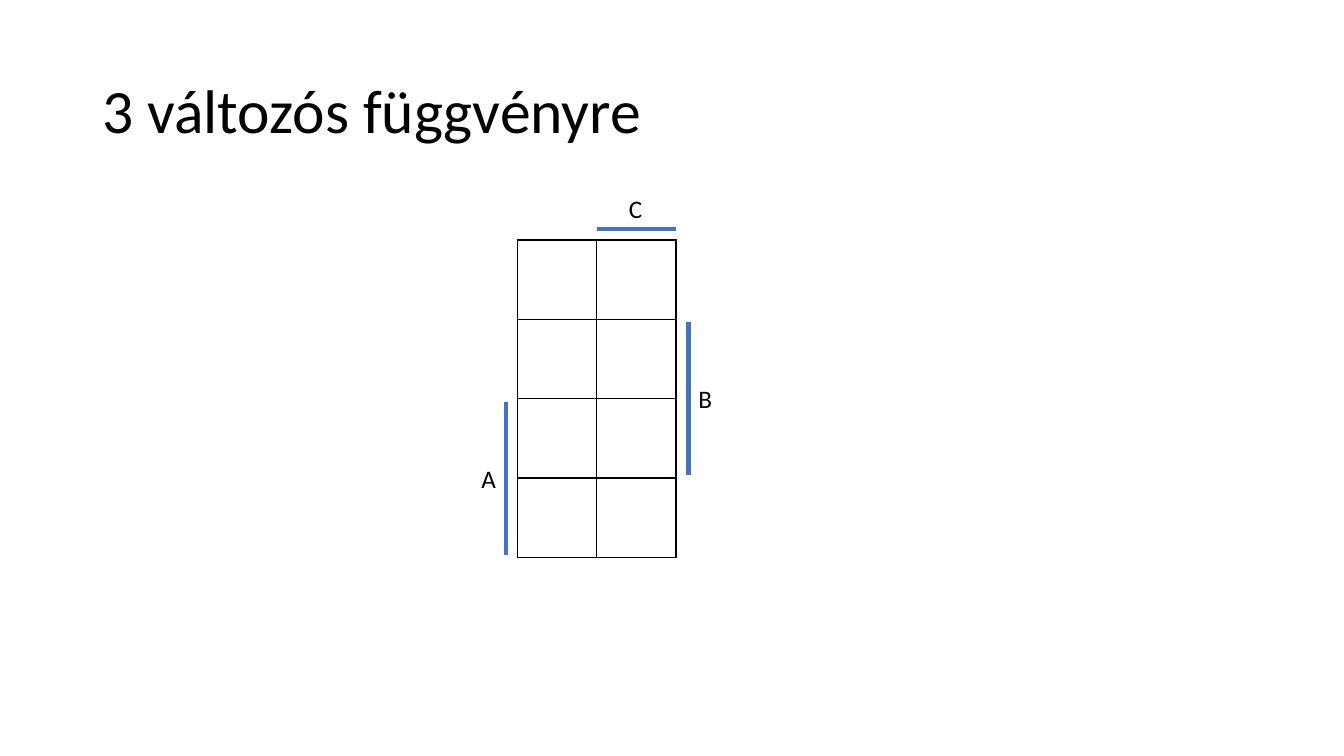
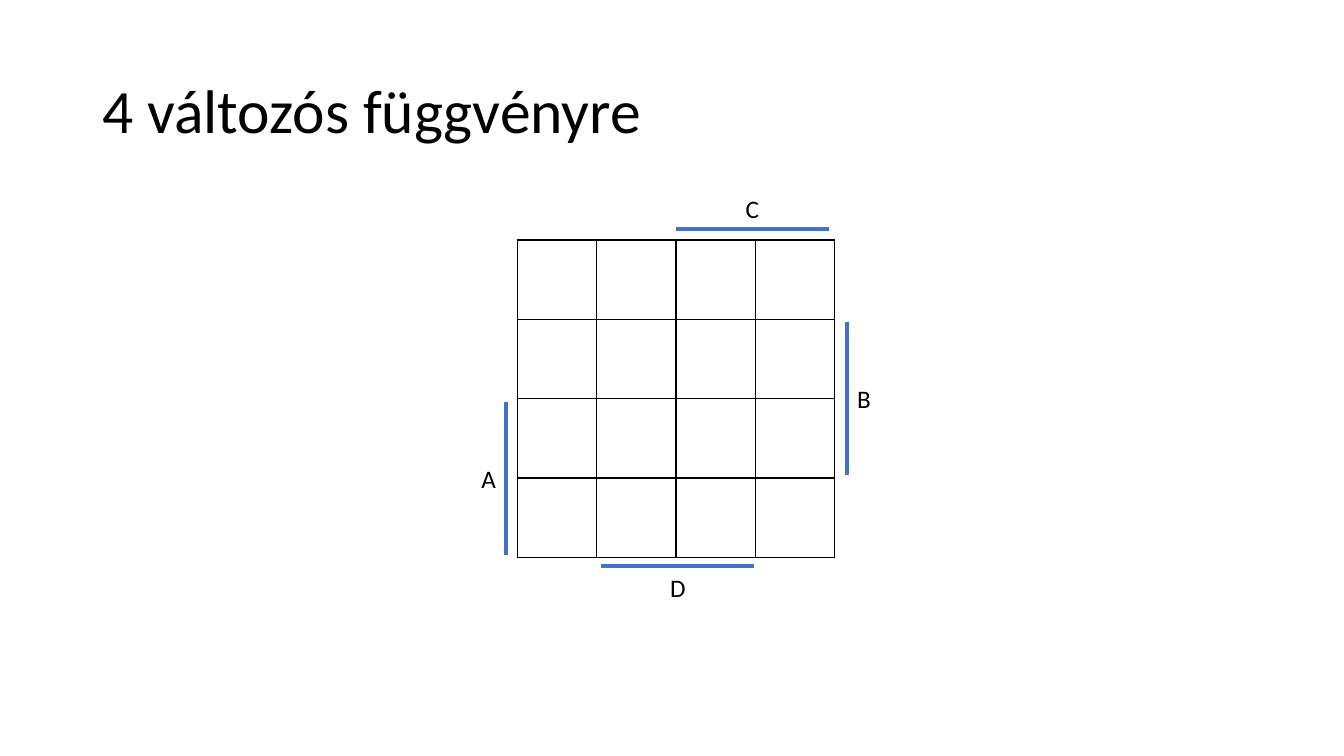
"""Builds two slides with empty Karnaugh maps for three and four variables."""
import lxml.etree
import pptx
import pptx.dml.color
import pptx.enum.shapes
import pptx.enum.text
import pptx.oxml.ns
import pptx.util

Pt = pptx.util.Pt
COLORS = {"text": "000000", "grid": "000000", "bar": "4472C4"}
FONT = "Calibri"
GRID_LEFT, GRID_TOP, CELL, ROWS = 369.4, 171.4, 56.7, 4
LABEL_WIDTH, LABEL_HEIGHT = 24.5, 28.8
PAIR = 109.4


def rgb(name):
    return pptx.dml.color.RGBColor.from_string(COLORS[name])


def add_text(slide, text, left, top, width, height, size):
    box = slide.shapes.add_textbox(Pt(left), Pt(top), Pt(width), Pt(height))
    box.text_frame.text = text
    para = box.text_frame.paragraphs[0]
    font = para.runs[0].font
    font.name, font.size, font.color.rgb = FONT, Pt(size), rgb("text")
    return box.text_frame, para


def add_title(slide, text):
    frame, para = add_text(slide, text, 66, 28.8, 828, 104.4, 44)
    frame.word_wrap = True
    frame.vertical_anchor = pptx.enum.text.MSO_ANCHOR.MIDDLE
    para.line_spacing = 0.9


def set_borders(cell):
    qn = pptx.oxml.ns.qn
    properties = cell._tc.get_or_add_tcPr()
    for edge in ("a:lnL", "a:lnR", "a:lnT", "a:lnB"):
        line = lxml.etree.SubElement(properties, qn(edge), w=str(int(Pt(1))))
        fill = lxml.etree.SubElement(line, qn("a:solidFill"))
        lxml.etree.SubElement(fill, qn("a:srgbClr"), val=COLORS["grid"])


def add_grid(slide, columns):
    table = slide.shapes.add_table(
        ROWS, columns, Pt(GRID_LEFT), Pt(GRID_TOP), Pt(columns * CELL), Pt(ROWS * CELL)
    ).table
    table.first_row = table.horz_banding = False
    for column in table.columns:
        column.width = Pt(CELL)
    for row in table.rows:
        row.height = Pt(CELL)
    for cell in table.iter_cells():
        set_borders(cell)
        cell.fill.background()


def add_bar(slide, start_x, start_y, end_x, end_y):
    bar = slide.shapes.add_connector(
        pptx.enum.shapes.MSO_CONNECTOR.STRAIGHT, Pt(start_x), Pt(start_y), Pt(end_x), Pt(end_y)
    )
    bar.line.color.rgb = rgb("bar")
    bar.line.width = Pt(3)
    lxml.etree.SubElement(bar._element.spPr, pptx.oxml.ns.qn("a:effectLst"))


def add_variable(slide, columns, name, side, first_cell, inset, length=PAIR):
    start = first_cell * CELL + inset
    middle = start + length / 2
    if side in ("top", "bottom"):
        x = GRID_LEFT + start
        y = GRID_TOP - 8 if side == "top" else GRID_TOP + ROWS * CELL + 6.2
        add_bar(slide, x, y, x + length, y)
        left = GRID_LEFT + middle - LABEL_WIDTH / 2
        top = y - LABEL_HEIGHT if side == "top" else y + 1
    else:
        x = GRID_LEFT - 8.2 if side == "left" else GRID_LEFT + columns * CELL + 9
        y = GRID_TOP + start
        add_bar(slide, x, y, x, y + length)
        left = x - LABEL_WIDTH if side == "left" else x
        top = GRID_TOP + middle - LABEL_HEIGHT / 2
    frame, _ = add_text(slide, name, left, top, LABEL_WIDTH, LABEL_HEIGHT, 18)
    frame.word_wrap = False
    frame.auto_size = pptx.enum.text.MSO_AUTO_SIZE.SHAPE_TO_FIT_TEXT


def add_map_slide(deck, title, columns, variables):
    slide = deck.slides.add_slide(deck.slide_layouts[6])
    add_title(slide, title)
    add_grid(slide, columns)
    for variable in variables:
        add_variable(slide, columns, *variable)


def main():
    deck = pptx.Presentation()
    deck.slide_width, deck.slide_height = Pt(960), Pt(540)
    row_variables = [("A", "left", 2, 2.5), ("B", "right", 1, 1.7)]
    add_map_slide(deck, "3 változós függvényre", 2,
                  row_variables + [("C", "top", 1, 0, CELL)])
    add_map_slide(deck, "4 változós függvényre", 4,
                  row_variables + [("C", "top", 2, 0.3), ("D", "bottom", 1, 3)])
    deck.save("out.pptx")


if __name__ == "__main__":
    main()
